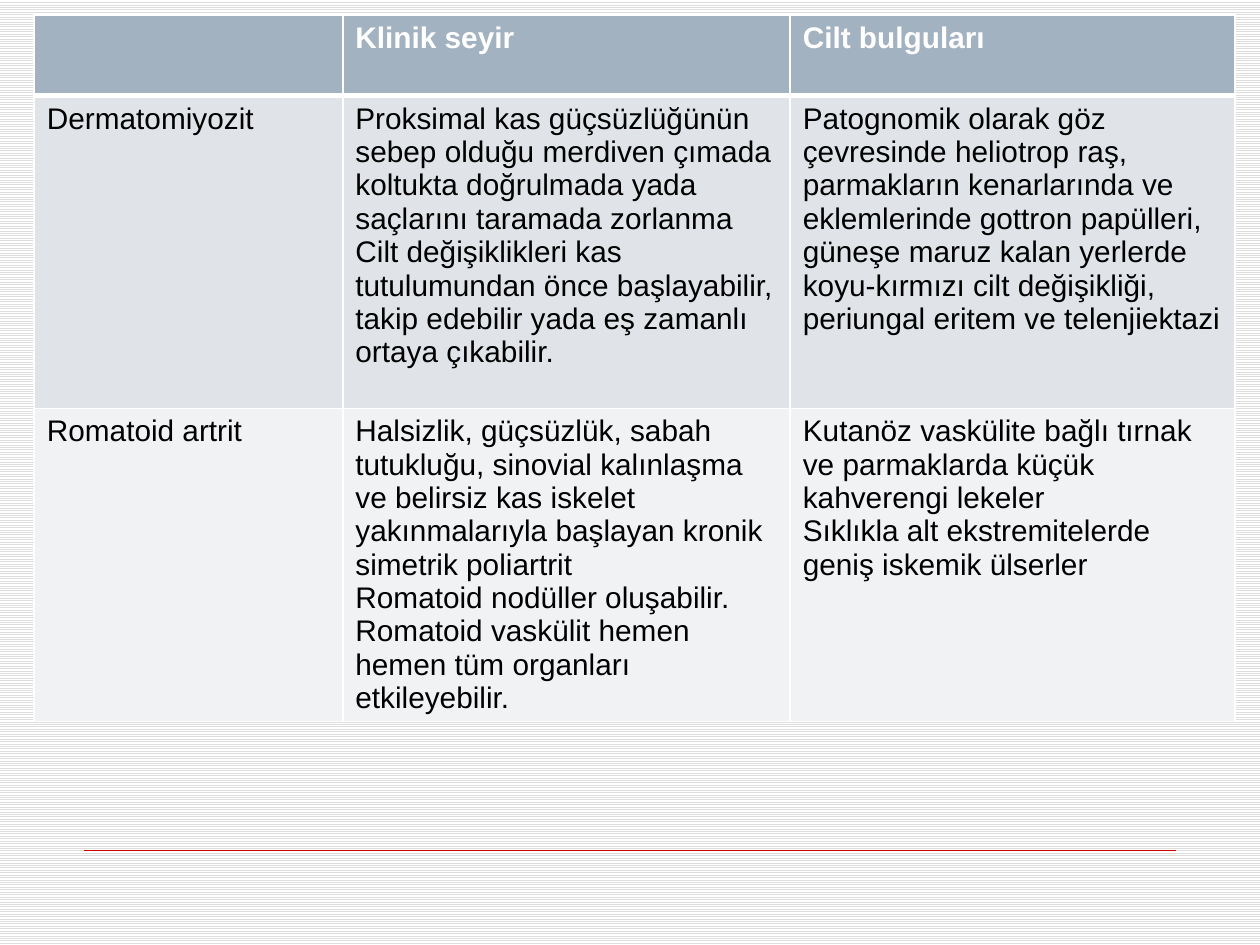
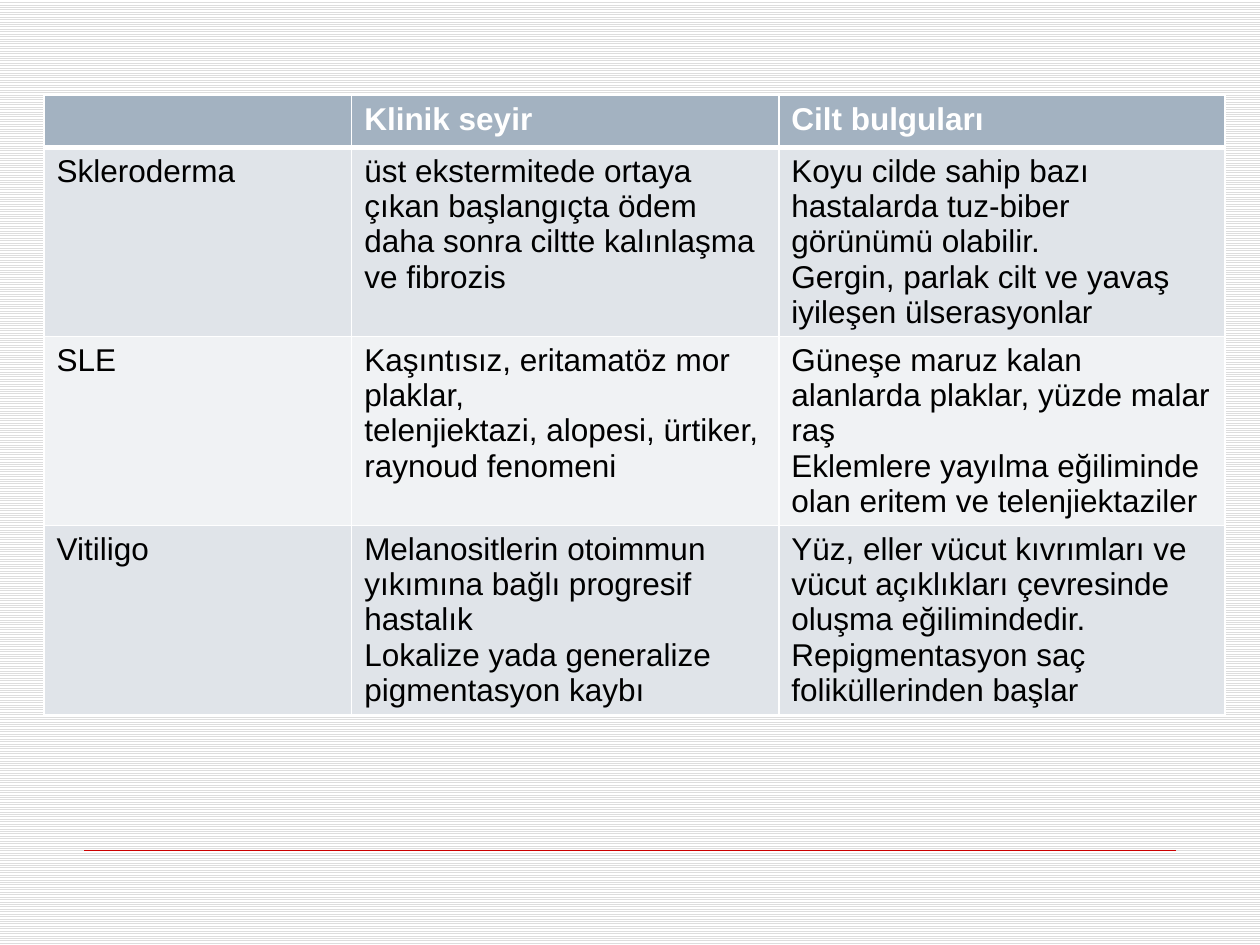
from lxml.etree import SubElement
from pptx import Presentation
from pptx.dml.color import RGBColor
from pptx.enum.dml import MSO_PATTERN
from pptx.enum.shapes import MSO_CONNECTOR
from pptx.oxml import parse_xml
from pptx.oxml.ns import nsdecls, qn
from pptx.util import Cm, Pt

WHITE = RGBColor(0xFF, 0xFF, 0xFF)
BLACK = RGBColor(0x00, 0x00, 0x00)
STRIPE = RGBColor(0xDD, 0xDD, 0xDD)
RED = RGBColor(0xCC, 0x00, 0x00)
HEADER_FILL = RGBColor(0xA3, 0xB2, 0xC1)
BAND_FILLS = [RGBColor(0xE0, 0xE4, 0xE9), RGBColor(0xF0, 0xF2, 0xF4)]
FONT = "Arial"

HEADER = ("", "Klinik seyir", "Cilt bulguları")

# Lengths in centimetres; each line of a cell is a paragraph
TABLES = [
    {
        "at": (0.69, 0.3), "cols": (6.22, 9.02, 8.97),
        "header_height": 1.63, "row_height": 6.3, "size": 17,
        "rows": [
            ("Dermatomiyozit",
             "Proksimal kas güçsüzlüğünün sebep olduğu merdiven çımada koltukta "
             "doğrulmada yada saçlarını taramada zorlanma\n"
             "Cilt değişiklikleri kas tutulumundan önce başlayabilir, takip "
             "edebilir yada eş zamanlı ortaya çıkabilir.",
             "Patognomik olarak göz çevresinde heliotrop raş,\n"
             "parmakların kenarlarında ve eklemlerinde gottron papülleri,\n"
             "güneşe maruz kalan yerlerde koyu-kırmızı cilt değişikliği,\n"
             "periungal eritem ve telenjiektazi"),
            ("Romatoid artrit",
             "Halsizlik, güçsüzlük, sabah tutukluğu, sinovial kalınlaşma ve "
             "belirsiz kas iskelet yakınmalarıyla başlayan kronik simetrik "
             "poliartrit\n"
             "Romatoid nodüller oluşabilir.\n"
             "Romatoid vaskülit hemen hemen tüm organları etkileyebilir.",
             "Kutanöz vaskülite bağlı tırnak ve parmaklarda küçük kahverengi "
             "lekeler\n"
             "Sıklıkla alt ekstremitelerde geniş iskemik ülserler"),
        ],
    },
    {
        "at": (0.89, 1.93), "cols": (6.2, 8.61, 8.99),
        "header_height": 1.04, "row_height": 3.81, "size": 18,
        "rows": [
            ("Skleroderma",
             "üst ekstermitede ortaya çıkan başlangıçta ödem daha sonra ciltte "
             "kalınlaşma ve fibrozis",
             "Koyu cilde sahip bazı hastalarda tuz-biber görünümü olabilir.\n"
             "Gergin, parlak cilt ve yavaş iyileşen ülserasyonlar"),
            ("SLE",
             "Kaşıntısız, eritamatöz mor plaklar,\n"
             "telenjiektazi, alopesi, ürtiker, raynoud fenomeni",
             "Güneşe maruz kalan alanlarda plaklar, yüzde malar raş\n"
             "Eklemlere yayılma eğiliminde olan eritem ve telenjiektaziler"),
            ("Vitiligo",
             "Melanositlerin otoimmun yıkımına bağlı progresif hastalık\n"
             "Lokalize yada generalize pigmentasyon kaybı",
             "Yüz, eller vücut kıvrımları ve vücut açıklıkları çevresinde "
             "oluşma eğilimindedir.\n"
             "Repigmentasyon saç foliküllerinden başlar"),
        ],
    },
]


def set_background(master):
    fill = master.background.fill
    fill.patterned()
    fill.pattern = MSO_PATTERN.LIGHT_HORIZONTAL
    fill.fore_color.rgb = STRIPE
    fill.back_color.rgb = WHITE


def add_footer_line(s):
    y = Cm(17.15)
    line = s.shapes.add_connector(MSO_CONNECTOR.STRAIGHT, Cm(1.7), y, Cm(23.7), y)
    line.line.color.rgb = RED
    line.line.width = Pt(0.25)
    SubElement(line._element.spPr, qn("a:effectLst"))


def set_borders(cell, row):
    """White 1 pt borders, with a 3 pt rule between header and body."""
    widths = {"L": 1, "R": 1, "T": 3 if row == 1 else 1, "B": 3 if row == 0 else 1}
    tcPr = cell._tc.get_or_add_tcPr()
    for i, (side, width) in enumerate(widths.items()):
        tcPr.insert(i, parse_xml(
            f'<a:ln{side} {nsdecls("a")} w="{Pt(width)}"><a:solidFill>'
            f'<a:srgbClr val="{WHITE}"/></a:solidFill></a:ln{side}>'))


def fill_cell(cell, text, row, size):
    is_header = row == 0
    cell.fill.solid()
    cell.fill.fore_color.rgb = HEADER_FILL if is_header else BAND_FILLS[(row - 1) % 2]
    set_borders(cell, row)
    if not text:
        return
    tf = cell.text_frame
    tf.text = text
    font_format = {"name": FONT, "size": Pt(size), "bold": is_header}
    for p in tf.paragraphs:
        for r in p.runs:
            for name, value in font_format.items():
                setattr(r.font, name, value)
            r.font.color.rgb = WHITE if is_header else BLACK


def add_disease_table(s, spec_table):
    rows = [HEADER, *spec_table["rows"]]
    cols = spec_table["cols"]
    heights = [spec_table["header_height"]] + [spec_table["row_height"]] * (len(rows) - 1)
    left, top = spec_table["at"]
    table = s.shapes.add_table(len(rows), len(cols), Cm(left), Cm(top),
                               Cm(sum(cols)), Cm(sum(heights))).table
    for column, width in zip(table.columns, cols):
        column.width = Cm(width)
    for i, (texts, height) in enumerate(zip(rows, heights)):
        table.rows[i].height = Cm(height)
        for j, text in enumerate(texts):
            fill_cell(table.cell(i, j), text, i, spec_table["size"])


def main():
    prs = Presentation()
    prs.slide_width, prs.slide_height = Cm(25.4), Cm(19.05)
    set_background(prs.slide_master)
    for disease_table in TABLES:
        s = prs.slides.add_slide(prs.slide_layouts[6])
        add_footer_line(s)
        add_disease_table(s, disease_table)
    prs.save("out.pptx")


if __name__ == "__main__":
    main()
